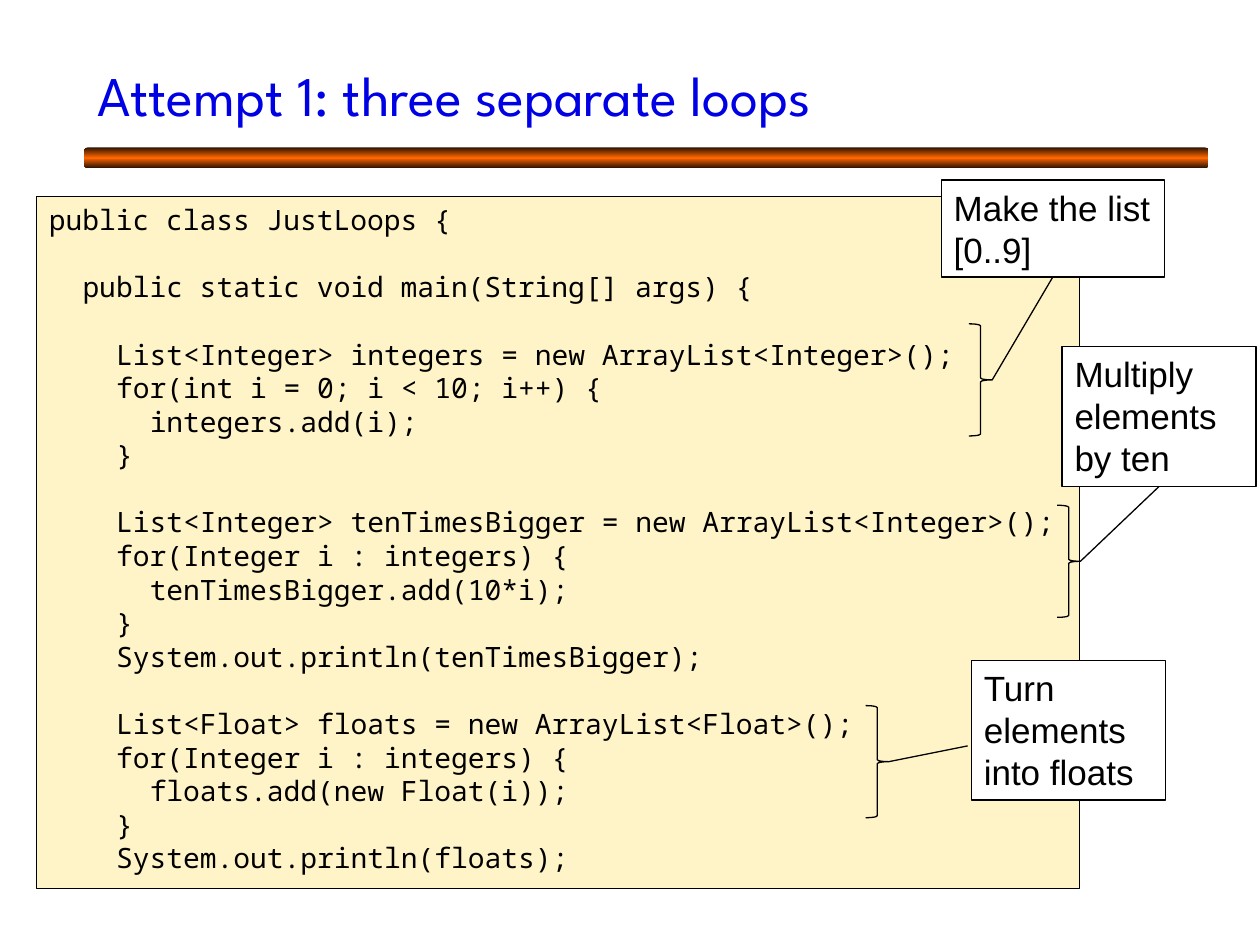
from copy import deepcopy
from dataclasses import dataclass

from lxml import etree
from pptx import Presentation
from pptx import util as u
from pptx.dml.color import RGBColor
from pptx.enum import shapes, text
from pptx.oxml.ns import qn

COLS, ROWS = 100, 75  # slide grid

CODE = """public class JustLoops {

  public static void main(String[] args) {

    List<Integer> integers = new ArrayList<Integer>();
    for(int i = 0; i < 10; i++) {
      integers.add(i);
    }

    List<Integer> tenTimesBigger = new ArrayList<Integer>();
    for(Integer i : integers) {
      tenTimesBigger.add(10*i);
    }
    System.out.println(tenTimesBigger);

    List<Float> floats = new ArrayList<Float>();
    for(Integer i : integers) {
      floats.add(new Float(i));
    }
    System.out.println(floats);"""


@dataclass(frozen=True)
class Theme:
    ink: str = "000000"
    paper: str = "FFFFFF"
    panel: str = "FFF4C7"
    head: str = "0000E5"
    edge: str = "2A1100"
    glow: str = "FF6600"
    line: float = 0.75
    title: tuple = ("League Spartan", 32)
    code: tuple = ("Noto Sans Mono", 16)
    note: tuple = ("Arial", 20)


class Deck:
    def __init__(self, theme):
        self.theme = theme
        self.prs = Presentation()
        self.prs.slide_width, self.prs.slide_height = u.Inches(10), u.Inches(7.5)
        self.slide = self.prs.slides.add_slide(self.prs.slide_layouts[5])

    def grid(self, x, y):
        return (int(self.prs.slide_width * x / COLS),
                int(self.prs.slide_height * y / ROWS))

    def font(self, par, face, color):
        for run in par.runs:
            run.font.name, run.font.size = face[0], u.Pt(face[1])
            run.font.color.rgb = RGBColor.from_string(color)

    def pen(self, item):
        item.line.color.rgb = RGBColor.from_string(self.theme.ink)
        item.line.width = u.Pt(self.theme.line)

    def shape(self, kind, x, y, w, h):
        item = self.slide.shapes.add_shape(
            kind, *self.grid(x, y), *self.grid(w, h))
        item.shadow.inherit = False
        return item

    def title(self, words, x, y, w, h):
        item = self.slide.shapes.title
        item.left, item.top = self.grid(x, y)
        item.width, item.height = self.grid(w, h)
        frame = item.text_frame
        frame.text = words
        frame.vertical_anchor = text.MSO_ANCHOR.MIDDLE
        frame.paragraphs[0].alignment = text.PP_ALIGN.LEFT
        self.font(frame.paragraphs[0], self.theme.title, self.theme.head)

    def bar(self, x, y, w, h):
        item = self.shape(shapes.MSO_SHAPE.ROUNDED_RECTANGLE, x, y, w, h)
        item.line.fill.background()
        item.fill.gradient()
        item.fill.gradient_angle = 90
        # Add a third stop so the glow sits in the middle
        stops = item.fill.gradient_stops
        first = item._element.spPr.find(".//" + qn("a:gs"))
        first.addnext(deepcopy(first))
        shades = (self.theme.edge, self.theme.glow, self.theme.edge)
        for stop, place, shade in zip(stops, (0, 0.5, 1), shades):
            stop.position = place
            stop.color.rgb = RGBColor.from_string(shade)

    def box(self, words, x, y, w, h, face, fill):
        item = self.shape(shapes.MSO_SHAPE.RECTANGLE, x, y, w, h)
        item.fill.solid()
        item.fill.fore_color.rgb = RGBColor.from_string(fill)
        self.pen(item)
        frame = item.text_frame
        frame.text = words
        frame.word_wrap = True
        frame.vertical_anchor = text.MSO_ANCHOR.TOP
        for par in frame.paragraphs:
            par.alignment = text.PP_ALIGN.LEFT
            self.font(par, face, self.theme.ink)
        return item

    def code(self, source, x, y, w, h):
        face = self.theme.code
        rows = source.split("\n")
        lines = [row.strip() for row in rows if row]
        item = self.box("\n".join(lines), x, y, w, h, face, self.theme.panel)
        pars = iter(item.text_frame.paragraphs)
        gap = 0
        for row in rows:
            if not row:
                gap = 1.2 * face[1]  # one line of space
                continue
            par = next(pars)
            par.space_before = u.Pt(gap)
            depth = len(row) - len(row.lstrip())
            props = par._p.get_or_add_pPr()
            props.set("marL", str(u.Pt(0.6 * face[1] * depth)))
            props.set("indent", "0")
            gap = 0

    def note(self, words, x, y, w, h):
        return self.box(words, x, y, w, h, self.theme.note, self.theme.paper)

    def brace(self, x, y, w=1.85, h=8.9):
        item = self.shape(shapes.MSO_SHAPE.RIGHT_BRACE, x, y, w, h)
        item.fill.background()
        self.pen(item)
        return x + w, y + h / 2  # tip

    def link(self, start, end, box=None):
        item = self.slide.shapes.add_connector(
            shapes.MSO_CONNECTOR.STRAIGHT, *self.grid(*start), *self.grid(*end))
        self.pen(item)
        etree.SubElement(item._element.spPr, qn("a:effectLst"))
        if box is not None:
            item.end_connect(box, 2)

    def save(self):
        self.prs.save("out.pptx")


def main():
    deck = Deck(Theme())

    # Heading
    deck.bar(6.7, 11.7, 89.2, 1.65)
    deck.title("Attempt 1: three separate loops", 6.7, 2.5, 89.2, 10)

    # Code panel
    deck.code(CODE, 2.9, 15.6, 82.8, 54.9)

    # Notes, each tied to the brace beside its loop
    make = deck.note("Make the list [0..9]", 74.7, 14.3, 17.7, 7.7)
    deck.link(deck.brace(76.9, 25.7), (83.6, 22), make)

    times = deck.note("Multiply elements by ten", 84.3, 27.5, 15.4, 11.1)
    deck.link(deck.brace(83.9, 40.1), (92, 38.6), times)

    deck.link(deck.brace(68.7, 56), (76.8, 59.2))
    deck.note("Turn elements into floats", 77.1, 52.4, 15.4, 11.1)

    deck.save()


if __name__ == "__main__":
    main()
